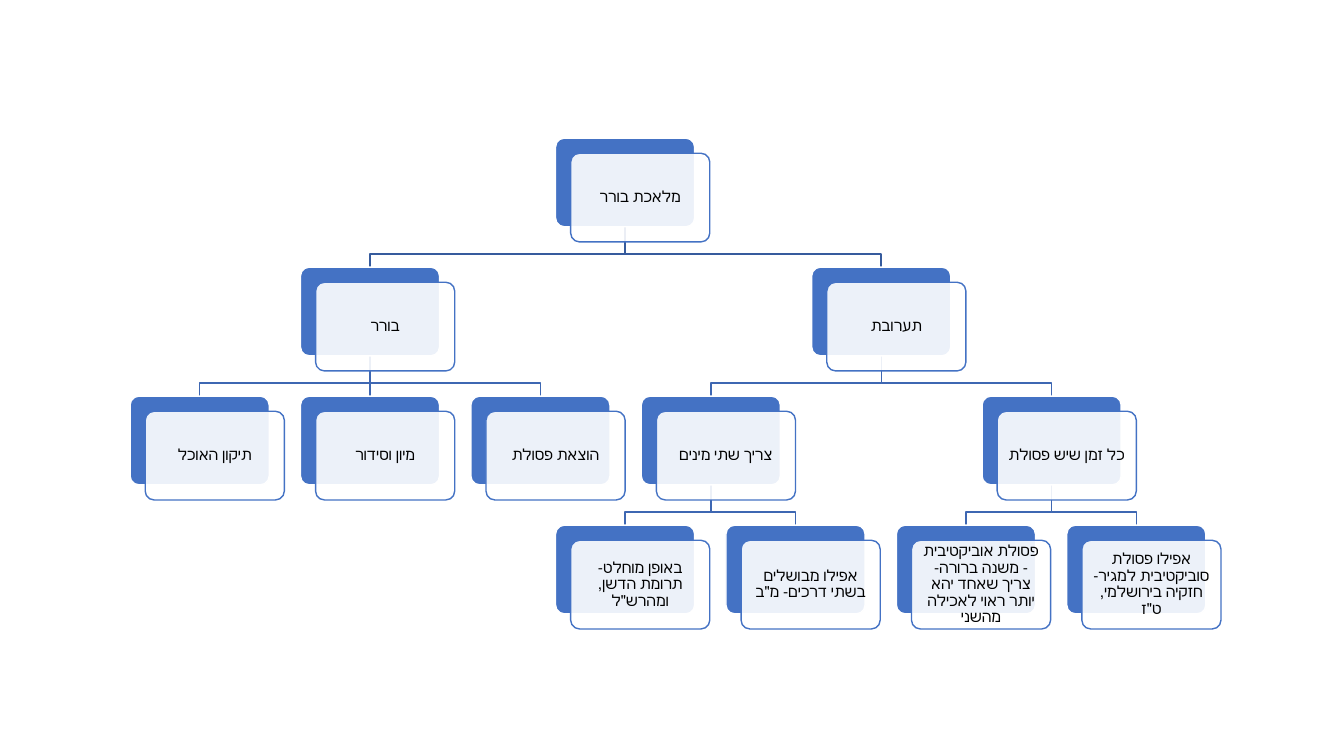
from collections import namedtuple

from lxml.etree import SubElement
from pptx import Presentation
from pptx.dml.color import RGBColor
from pptx.enum.shapes import MSO_CONNECTOR as Connector, MSO_SHAPE as Preset
from pptx.enum.text import MSO_ANCHOR as Anchor, PP_ALIGN as Align
from pptx.oxml.ns import qn
from pptx.util import Pt

PX = 9144
SLIDE_WIDTH, SLIDE_HEIGHT = 1333, 750
CARD_WIDTH, CARD_HEIGHT = 138, 88
COLUMN_STEP, LEVEL_STEP = 169, 128
CARD_OFFSET, BEND_DROP, TEXT_INSET = 15, 27, 5
FONT = "Calibri"
BLUE, WHITE, BLACK = "4472C4", "FFFFFF", "000000"
ROOT_LINK, CHILD_LINK = "365B9D", "3E67B2"

Box = namedtuple("Box", "left top width height")
Node = namedtuple("Node", "text slot children")


def leaf(text, slot):
    return Node(text, slot, [])


def branch(text, *children):
    return Node(text, (children[0].slot + children[-1].slot) // 2, children)


TREE = branch(
    "מלאכת בורר",
    branch(
        "בורר",
        leaf("תיקון האוכל", 0),
        leaf("מיון וסידור", 2),
        leaf("הוצאת פסולת", 4),
    ),
    branch(
        "תערובת",
        branch(
            "צריך שתי מינים",
            leaf('באופן מוחלט- תרומת הדשן, ומהרש"ל', 5),
            leaf('אפילו מבושלים בשתי דרכים- מ"ב', 7),
        ),
        branch(
            "כל זמן שיש פסולת",
            leaf("פסולת אוביקטיבית - משנה ברורה- צריך שאחד יהא יותר ראוי לאכילה מהשני", 9),
            leaf('אפילו פסולת סוביקטיבית למגיר- חזקיה בירושלמי, ט"ז', 11),
        ),
    ),
)


def color(value):
    return RGBColor.from_string(value)


def add_panel(page, box, fill, line):
    panel = page.shapes.add_shape(Preset.ROUNDED_RECTANGLE, *[length * PX for length in box])
    panel.adjustments[0] = 0.1
    panel.shadow.inherit = False
    panel.fill.solid()
    panel.fill.fore_color.rgb = color(fill)
    panel.line.color.rgb = color(line)
    panel.line.width = Pt(1)
    return panel


def add_label(panel, text):
    frame = panel.text_frame
    frame.word_wrap = True
    frame.vertical_anchor = Anchor.MIDDLE
    frame.margin_left = frame.margin_right = TEXT_INSET * PX
    frame.margin_top = frame.margin_bottom = TEXT_INSET * PX
    para = frame.paragraphs[0]
    para.alignment = Align.CENTER
    para.line_spacing = 0.9
    para._p.get_or_add_pPr().set("rtl", "1")
    run = para.add_run()
    run.text = text
    run.font.size = Pt(11)
    run.font.name = FONT
    run.font.color.rgb = color(BLACK)


def add_card(page, box, text):
    back = add_panel(page, box, BLUE, WHITE)
    front_box = box._replace(left=box.left + CARD_OFFSET, top=box.top + CARD_OFFSET)
    front = add_panel(page, front_box, WHITE, BLUE)
    fill = front._element.spPr.find(qn("a:solidFill"))
    SubElement(fill[0], qn("a:alpha"), val="90000")
    add_label(front, text)
    return back


def add_link(page, parent, child, line):
    start_x = parent.left + parent.width // 2
    start_y = parent.top + parent.height
    end_x = child.left + child.width // 2
    if start_x == end_x:
        link = page.shapes.add_connector(Connector.STRAIGHT, start_x, start_y, end_x, child.top)
        link.begin_connect(parent, 2)
        link.end_connect(child, 0)
        SubElement(link._element.spPr, qn("a:effectLst"))
    else:
        bend_y = start_y + BEND_DROP * PX
        outline = page.shapes.build_freeform(start_x, start_y)
        outline.add_line_segments(
            [(start_x, bend_y), (end_x, bend_y), (end_x, child.top)], close=False
        )
        link = outline.convert_to_shape()
        link.fill.background()
        link.shadow.inherit = False
    link.line.color.rgb = color(line)
    link.line.width = Pt(1)
    page.shapes._spTree.insert(2, link._element)


def add_tree(page, box, node, level=0):
    card_box = Box(
        box.left + node.slot * COLUMN_STEP // 2,
        box.top + level * LEVEL_STEP,
        CARD_WIDTH,
        CARD_HEIGHT,
    )
    card = add_card(page, card_box, node.text)
    for child in node.children:
        child_card = add_tree(page, box, child, level + 1)
        add_link(page, card, child_card, CHILD_LINK if level else ROOT_LINK)
    return card


def main():
    deck = Presentation()
    deck.slide_width = SLIDE_WIDTH * PX
    deck.slide_height = SLIDE_HEIGHT * PX
    page = deck.slides.add_slide(deck.slide_layouts[6])
    add_tree(page, Box(129, 137, 1082, 487), TREE)
    deck.save("out.pptx")


if __name__ == "__main__":
    main()
